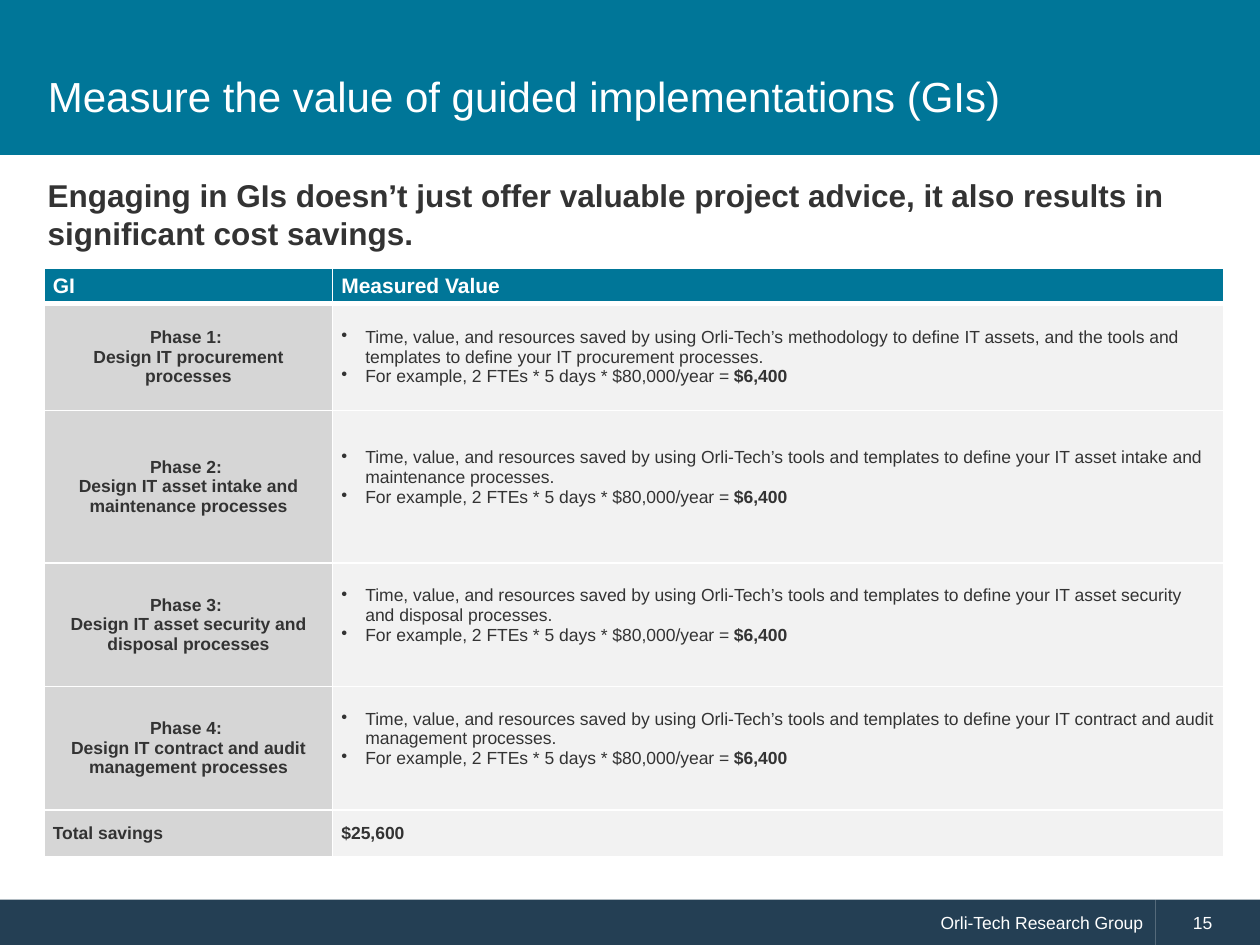
from pptx import Presentation
from pptx.dml.color import RGBColor
from pptx.enum import shapes, text
from pptx.oxml import parse_xml
from pptx.oxml.ns import nsdecls
from pptx.util import Inches, Pt

TEAL = RGBColor(0x00, 0x76, 0x98)
NAVY = RGBColor(0x24, 0x3F, 0x54)
INK = RGBColor(0x33, 0x33, 0x33)
WHITE = RGBColor(0xFF, 0xFF, 0xFF)
GREY = RGBColor(0xD6, 0xD6, 0xD6)
PALE = RGBColor(0xF2, 0xF2, 0xF2)
LEFT, MID, RIGHT = text.PP_ALIGN.LEFT, text.PP_ALIGN.CENTER, text.PP_ALIGN.RIGHT

WIDTHS = [2.29, 7.07]
HEIGHTS = [0.28, 0.85, 1.21, 0.98, 0.98, 0.37]
TOOLS = "tools and templates to define your IT"
PHASES = [
    ("Design IT procurement processes",
     "methodology to define IT assets, and the tools and templates "
     "to define your IT procurement processes."),
    ("Design IT asset intake and maintenance processes",
     f"{TOOLS} asset intake and maintenance processes."),
    ("Design IT asset security and disposal processes",
     f"{TOOLS} asset security and disposal processes."),
    ("Design IT contract and audit management processes",
     f"{TOOLS} contract and audit management processes."),
]


def write(frame, paras, size=10, color=INK, bold=False, align=LEFT,
          indent=0, bullet=False, anchor=None):
    frame.word_wrap = True
    if anchor is not None:
        frame.vertical_anchor = anchor
    for i, runs in enumerate(paras):
        para = frame.paragraphs[0] if i == 0 else frame.add_paragraph()
        para.alignment = align
        props = para._p.get_or_add_pPr()
        if indent:
            props.set("marL", str(Inches(indent)))
        if bullet:
            props.set("indent", str(-Inches(indent)))
            props.append(parse_xml(f'<a:buChar {nsdecls("a")} char="•"/>'))
        for j, words in enumerate([runs] if isinstance(runs, str) else runs):
            run = para.add_run()
            run.text = words
            font = run.font
            font.name, font.size = "Arial", Pt(size)
            font.bold = bold or j > 0
            font.color.rgb = color


def bar(slide, x, y, w, h, fill):
    shape = slide.shapes.add_shape(
        shapes.MSO_SHAPE.RECTANGLE, Inches(x), Inches(y), Inches(w), Inches(h))
    shape.shadow.inherit = False
    shape.fill.solid()
    shape.fill.fore_color.rgb = fill
    shape.line.fill.background()
    return shape


def header(slide, x, y, w, h):
    title = slide.shapes.title
    band = bar(slide, x, y, w, h, TEAL)
    title._element.addprevious(band._element)
    title.left, title.top = Inches(x + 0.28), Inches(y + 0.28)
    title.width, title.height = Inches(w - 0.57), Inches(h - 0.27)
    title.text_frame.auto_size = text.MSO_AUTO_SIZE.NONE
    write(title.text_frame, ["Measure the value of guided implementations (GIs)"],
          size=24, color=WHITE, anchor=text.MSO_ANCHOR.MIDDLE)


def lead(slide, x, y, w, h):
    box = slide.shapes.add_textbox(Inches(x), Inches(y), Inches(w), Inches(h))
    write(box.text_frame,
          ["Engaging in GIs doesn’t just offer valuable project advice, "
           "it also results in significant cost savings."], size=18, bold=True)


def footer(slide, x, y, w, h):
    split = w - 0.83
    name = bar(slide, x, y, split, h, NAVY)
    write(name.text_frame, ["Orli-Tech Research Group"], color=WHITE,
          align=RIGHT, indent=0.29, anchor=text.MSO_ANCHOR.MIDDLE)
    page = bar(slide, x + split, y, w - split, h, NAVY)
    write(page.text_frame, ["15"], color=WHITE, indent=0.2,
          anchor=text.MSO_ANCHOR.MIDDLE)


def cell(grid, row, col, paras, fill, base=0, **fmt):
    item = grid.cell(row, col)
    item.margin_left = item.margin_right = Inches(0.07)
    item.margin_top, item.margin_bottom = 0, Inches(base)
    item.vertical_anchor = text.MSO_ANCHOR.MIDDLE
    props = item._tc.get_or_add_tcPr()
    thick = {0: "B", 1: "T"}.get(row)
    for side in "LRTB":
        width = Pt(3 if side == thick else 1)
        props.append(parse_xml(
            f'<a:ln{side} {nsdecls("a")} w="{width}"><a:solidFill>'
            f'<a:srgbClr val="{WHITE}"/></a:solidFill></a:ln{side}>'))
    item.fill.solid()
    item.fill.fore_color.rgb = fill
    write(item.text_frame, paras, **fmt)


def savings(slide, x, y):
    grid = slide.shapes.add_table(
        len(HEIGHTS), len(WIDTHS), Inches(x), Inches(y),
        Inches(sum(WIDTHS)), Inches(sum(HEIGHTS))).table
    for col, width in zip(grid.columns, WIDTHS):
        col.width = Inches(width)
    for row, height in zip(grid.rows, HEIGHTS):
        row.height = Inches(height)
    for col, label in enumerate(["GI", "Measured Value"]):
        cell(grid, 0, col, [label], TEAL, size=12, color=WHITE, bold=True)
    for n, (goal, gain) in enumerate(PHASES, 1):
        cell(grid, n, 0, [f"Phase {n}: ", goal], GREY, bold=True, align=MID)
        cell(grid, n, 1,
             [f"Time, value, and resources saved by using Orli-Tech’s {gain}",
              ["For example, 2 FTEs * 5 days * $80,000/year = ", "$6,400"]],
             PALE, base=0 if n == 1 else 0.15, indent=0.19, bullet=True)
    last = len(HEIGHTS) - 1
    cell(grid, last, 0, ["Total savings"], GREY, bold=True)
    cell(grid, last, 1, ["$25,600"], PALE, bold=True)


def main():
    deck = Presentation()
    deck.slide_width, deck.slide_height = Inches(10), Inches(7.5)
    slide = deck.slides.add_slide(deck.slide_layouts[5])
    footer(slide, 0, 7.14, 10, 0.37)
    header(slide, 0, 0, 10, 1.23)
    lead(slide, 0.28, 1.35, 9.43, 0.72)
    savings(slide, 0.35, 2.13)
    deck.save("out.pptx")


if __name__ == "__main__":
    main()
